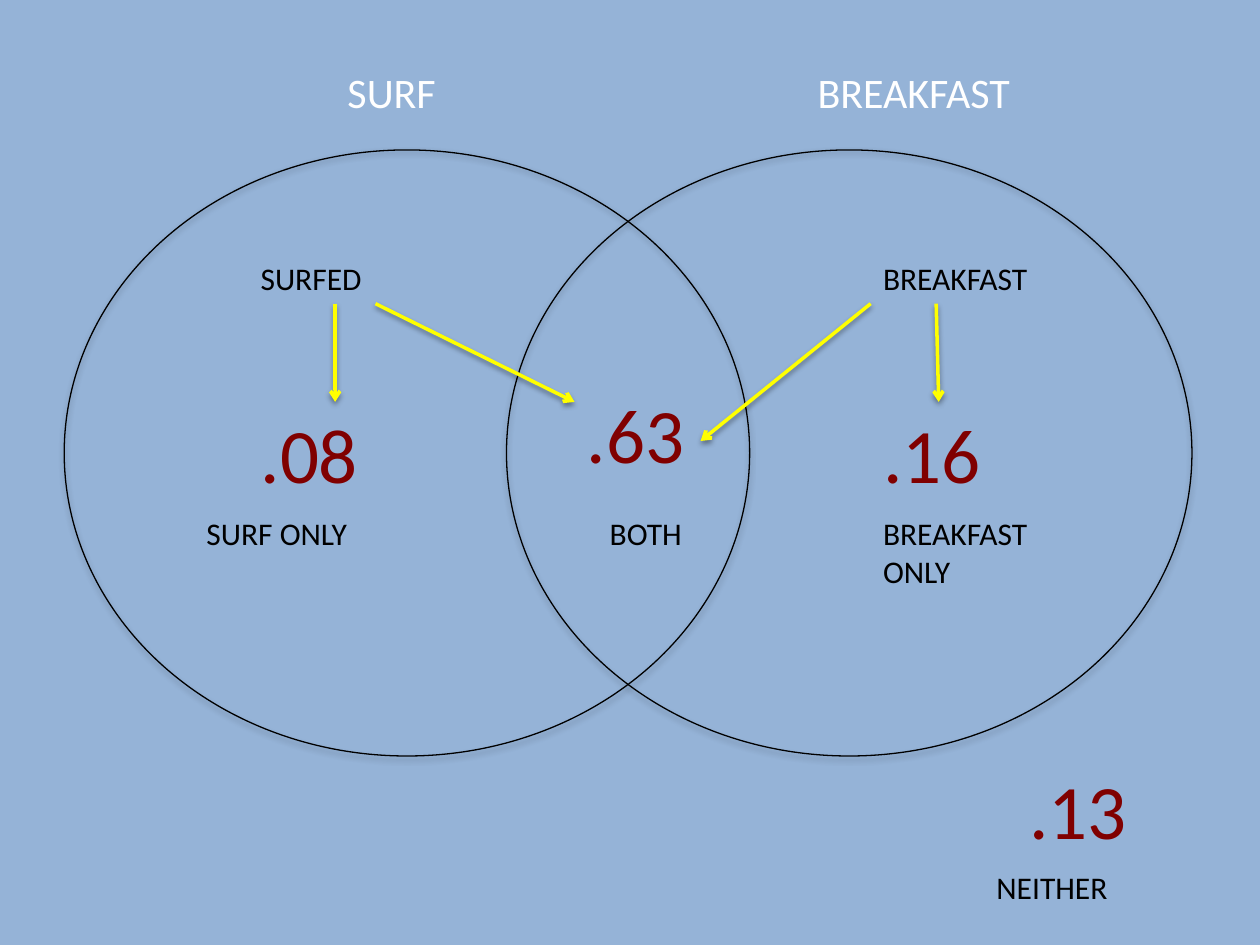
from lxml.etree import SubElement
from pptx import Presentation
from pptx.dml.color import RGBColor
from pptx.enum.shapes import MSO_CONNECTOR, MSO_SHAPE
from pptx.enum.text import MSO_AUTO_SIZE
from pptx.oxml.ns import qn
from pptx.util import Inches, Pt

COLORS = {"back": "95B3D7", "head": "FFFFFF", "value": "800000",
          "label": "000000", "ring": "000000", "arrow": "FFFF00"}
SIZES = {"head": 24, "value": 44, "label": 18}
HEIGHTS = {"head": 0.5, "value": 0.84, "label": 0.4}

RINGS = [0.51, 4.02]  # left edges
RING_TOP, RING_WIDTH, RING_HEIGHT = 1.19, 5.44, 4.81

# role, text, left, top, width
TEXTS = [
    ("head", "SURF", 2.66, 0.48, 1.9),
    ("head", "BREAKFAST", 6.39, 0.48, 1.9),
    ("value", ".63", 4.56, 3.02, 1.38),
    ("value", ".08", 1.97, 3.18, 1.38),
    ("value", ".16", 6.91, 3.18, 1.38),
    ("value", ".13", 8.07, 6, 1.38),
    ("label", "BOTH", 4.74, 4.03, 1.65),
    ("label", "NEITHER", 7.81, 6.84, 1.65),
    ("label", "SURF ONLY", 1.54, 4.03, 1.81),
    ("label", "BREAKFAST ONLY", 6.91, 4.03, 1.81),
    ("label", "SURFED", 1.97, 2.01, 1.73),
    ("label", "BREAKFAST", 6.91, 2.01, 1.81),
]

ARROW_TOP = 2.41
# start x, end x, end y
ARROWS = [(2.66, 2.66, 3.19), (2.98, 4.56, 3.19),
          (7.43, 7.45, 3.19), (6.91, 5.56, 3.5)]


def color(role):
    return RGBColor.from_string(COLORS[role])


def add_shadow(shape, dist, alpha):
    """Cast a soft black shadow straight down; dist in points, alpha in percent."""
    effects = SubElement(shape._element.spPr, qn("a:effectLst"))
    outer = SubElement(effects, qn("a:outerShdw"), blurRad=str(Pt(3.1)),
                       dist=str(Pt(dist)), dir="5400000", rotWithShape="0")
    black = SubElement(outer, qn("a:srgbClr"), val="000000")
    SubElement(black, qn("a:alpha"), val=str(alpha * 1000))


def set_line(shape, role, width):
    shape.line.color.rgb = color(role)
    shape.line.width = Pt(width)


def add_ring(slide, left):
    ring = slide.shapes.add_shape(MSO_SHAPE.OVAL, Inches(left), Inches(RING_TOP),
                                  Inches(RING_WIDTH), Inches(RING_HEIGHT))
    ring.fill.background()
    set_line(ring, "ring", 0.75)
    add_shadow(ring, 1.8, 35)


def add_text(slide, role, text, left, top, width):
    box = slide.shapes.add_textbox(Inches(left), Inches(top),
                                   Inches(width), Inches(HEIGHTS[role]))
    frame = box.text_frame
    frame.word_wrap = True
    frame.auto_size = MSO_AUTO_SIZE.SHAPE_TO_FIT_TEXT
    frame.text = text
    font = frame.paragraphs[0].font
    font.name = "Calibri"
    font.size = Pt(SIZES[role])
    font.color.rgb = color(role)


def add_arrow(slide, start, end, bottom):
    arrow = slide.shapes.add_connector(MSO_CONNECTOR.STRAIGHT, Inches(start),
                                       Inches(ARROW_TOP), Inches(end), Inches(bottom))
    set_line(arrow, "arrow", 2)
    SubElement(arrow.line._get_or_add_ln(), qn("a:tailEnd"), type="arrow")
    add_shadow(arrow, 1.6, 38)


def main():
    deck = Presentation()
    deck.slide_width, deck.slide_height = Inches(10), Inches(7.5)
    slide = deck.slides.add_slide(deck.slide_layouts[6])
    fill = slide.background.fill
    fill.solid()
    fill.fore_color.rgb = color("back")
    for left in RINGS:
        add_ring(slide, left)
    for item in TEXTS:
        add_text(slide, *item)
    for item in ARROWS:
        add_arrow(slide, *item)
    deck.save("out.pptx")


if __name__ == "__main__":
    main()
